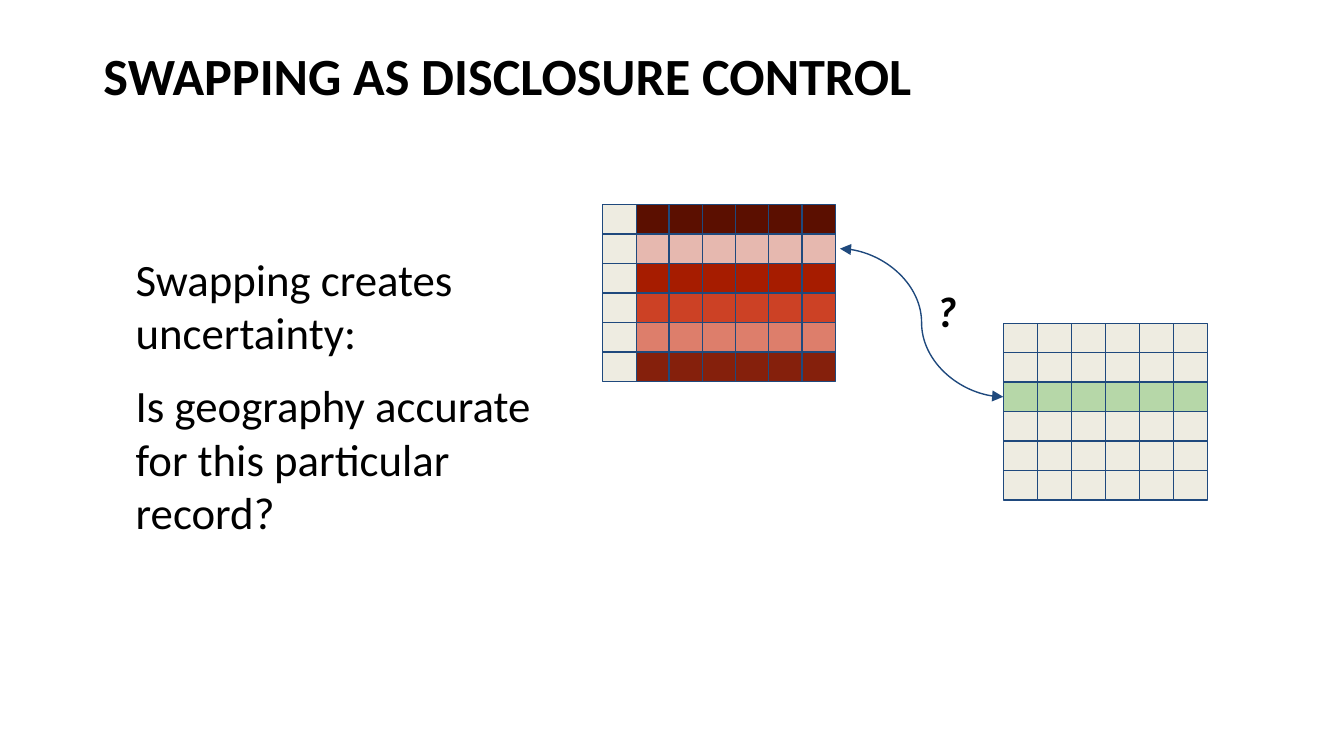
from dataclasses import dataclass

from lxml.etree import SubElement
from pptx import Presentation
from pptx.dml.color import RGBColor
from pptx.enum.shapes import MSO_CONNECTOR, MSO_SHAPE
from pptx.enum.text import MSO_ANCHOR, MSO_AUTO_SIZE, PP_ALIGN
from pptx.oxml.ns import qn
from pptx.util import Pt

PX = 4572  # EMU per px, 200 px to the inch
FONT = "Calibri"
LINE_WIDTH = Pt(0.75)
COLORS = {
    "text": "000000",
    "line": "1F497D",
    "plain": "EEECE1",
    "swapped": "B6D7A8",
    "maroon": "5B0F00",
    "pink": "E6B8AF",
    "red": "A61C00",
    "vermilion": "CC4125",
    "salmon": "DD7E6B",
    "brown": "85200C",
}


@dataclass(frozen=True)
class Box:
    left: int
    top: int
    width: int
    height: int

    def emu(self) -> tuple[int, int, int, int]:
        return self.left * PX, self.top * PX, self.width * PX, self.height * PX


@dataclass(frozen=True)
class Grid:
    box: Box
    columns: int
    row_colors: tuple[str, ...]


REGION = Grid(Box(946, 304, 297, 264), 6,
              ("maroon", "pink", "red", "vermilion", "salmon", "brown"))
REGION_KEYS = Grid(Box(897, 304, 50, 264), 1, ("plain",) * 6)
RECORDS = Grid(Box(1493, 481, 304, 263), 6,
               ("plain", "plain", "swapped", "plain", "plain", "plain"))
SWAPPED_ROW = RECORDS.row_colors.index("swapped")


def rgb(name: str) -> RGBColor:
    return RGBColor.from_string(COLORS[name])


def write_text(shape, *paragraphs: str, box: Box, size: int, bold: bool = False,
               italic: bool = False, gap: int = 0, inset: int = 20) -> None:
    """Place a text shape and fill it with unbulleted, left-aligned paragraphs."""
    shape.left, shape.top, shape.width, shape.height = box.emu()
    tf = shape.text_frame
    tf.word_wrap = True
    tf.auto_size = MSO_AUTO_SIZE.NONE
    tf.vertical_anchor = MSO_ANCHOR.TOP
    tf.margin_left = tf.margin_right = 20 * PX
    tf.margin_top = tf.margin_bottom = inset * PX
    for i, text in enumerate(paragraphs):
        p = tf.add_paragraph() if i else tf.paragraphs[0]
        p.alignment = PP_ALIGN.LEFT
        p.space_before = Pt(gap if i else 0)
        pPr = p._p.get_or_add_pPr()
        pPr.set("marL", "0")
        pPr.set("indent", "0")
        SubElement(pPr, qn("a:buNone"))
        r = p.add_run()
        r.text = text
        r.font.name = FONT
        r.font.size = Pt(size)
        r.font.bold = bold
        r.font.italic = italic
        r.font.color.rgb = rgb("text")


def draw_grid(shapes, grid: Grid) -> list[list]:
    """Draw the cells row by row and return them as rows."""
    left, top, width, height = grid.box.emu()
    w, h = width // grid.columns, height // len(grid.row_colors)
    rows = []
    for i, color in enumerate(grid.row_colors):
        row = []
        for j in range(grid.columns):
            cell = shapes.add_shape(MSO_SHAPE.RECTANGLE, left + j * w, top + i * h, w, h)
            cell.shadow.inherit = False
            cell.fill.solid()
            cell.fill.fore_color.rgb = rgb(color)
            cell.line.color.rgb = rgb("line")
            cell.line.width = LINE_WIDTH
            row.append(cell)
        rows.append(row)
    return rows


def draw_swap_arrow(shapes, x: int, y: int, target) -> None:
    """Draw a curved double arrow from a point to the left side of a cell."""
    arrow = shapes.add_connector(MSO_CONNECTOR.CURVE, x * PX, y * PX, target.left, target.top)
    arrow.end_connect(target, 1)
    arrow.line.color.rgb = rgb("line")
    arrow.line.width = LINE_WIDTH
    ln = arrow.line._get_or_add_ln()
    for tag in ("a:headEnd", "a:tailEnd"):
        SubElement(ln, qn(tag), type="triangle")
    SubElement(arrow._element.spPr, qn("a:effectLst"))


def main() -> None:
    prs = Presentation()
    prs.slide_width, prs.slide_height = 2000 * PX, 1125 * PX
    s = prs.slides.add_slide(prs.slide_layouts[1])

    write_text(s.shapes.title, "SWAPPING AS DISCLOSURE CONTROL",
               box=Box(134, 54, 1676, 282), size=28, bold=True, inset=10)
    write_text(s.placeholders[1], "Swapping creates uncertainty:",
               "Is geography accurate for this particular record?",
               box=Box(182, 354, 670, 500), size=24, gap=10)

    records = draw_grid(s.shapes, RECORDS)
    draw_swap_arrow(s.shapes, 1250, 370, records[SWAPPED_ROW][0])
    question = Box(1374, 404, 142, 118)
    write_text(s.shapes.add_textbox(*question.emu()), "?",
               box=question, size=23, bold=True, italic=True)

    group = s.shapes.add_group_shape()
    for grid in (REGION, REGION_KEYS):
        draw_grid(group.shapes, grid)

    prs.save("out.pptx")


if __name__ == "__main__":
    main()
